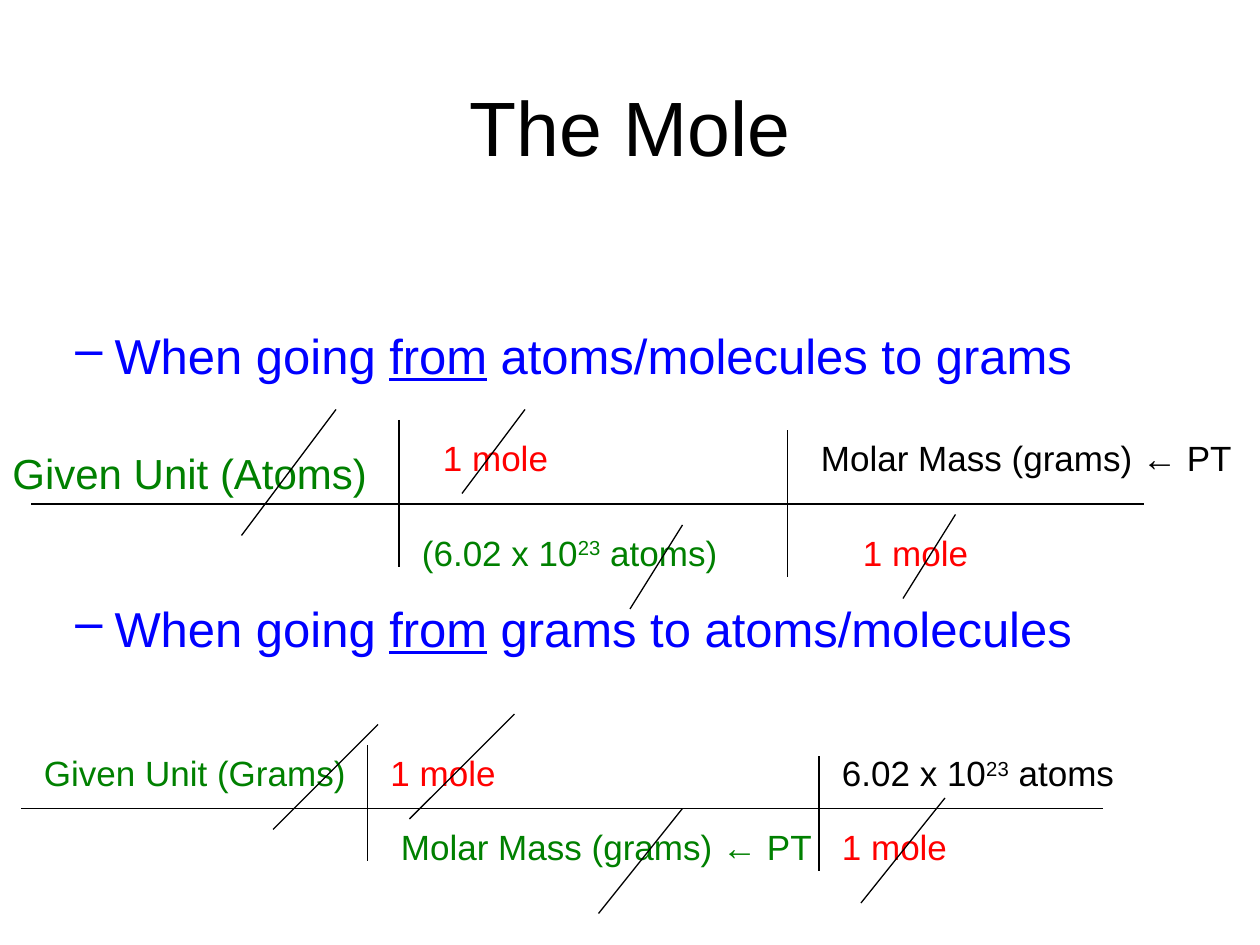
from lxml import etree
from pptx import Presentation
from pptx.dml.color import RGBColor
from pptx.enum.shapes import MSO_CONNECTOR as Connector
from pptx.enum.text import MSO_ANCHOR as Anchor, PP_ALIGN as Align
from pptx.oxml.ns import qn
from pptx.util import Cm, Pt

BLACK = RGBColor(0x00, 0x00, 0x00)
BLUE = RGBColor(0x00, 0x00, 0xFF)
GREEN = RGBColor(0x00, 0x80, 0x00)
RED = RGBColor(0xFF, 0x00, 0x00)


def grid(units):
    """Length of a number of grid units, 120 of which span the slide width."""
    return Cm(units * 25.4 / 120)


class MoleSlide:
    font_name = "Arial"
    line_width = Pt(0.75)

    def __init__(self, presentation):
        self.slide = presentation.slides.add_slide(presentation.slide_layouts[6])

    def text(self, left, top, width, height, parts, size=20, color=BLACK):
        """Add a one-paragraph box; parts are pairs of wording and 'u', 'sup' or ''."""
        box = self.slide.shapes.add_textbox(*map(grid, (left, top, width, height)))
        box.text_frame.word_wrap = True
        paragraph = box.text_frame.paragraphs[0]
        for wording, effect in parts:
            run = paragraph.add_run()
            run.text = wording
            values = {"name": self.font_name, "size": Pt(size), "underline": effect == "u"}
            for name, value in values.items():
                setattr(run.font, name, value)
            run.font.color.rgb = color
            if effect == "sup":
                run._r.get_or_add_rPr().set("baseline", "30000")
        return box

    def title(self, wording):
        frame = self.text(9, 3, 102, 18, [(wording, "")], 44).text_frame
        frame.vertical_anchor = Anchor.MIDDLE
        frame.paragraphs[0].alignment = Align.CENTER

    def heading(self, top, ending):
        parts = [("When going ", ""), ("from", "u"), (ending, "")]
        box = self.text(0, top, 120, 6.6, parts, 28, BLUE)
        properties = box.text_frame.paragraphs[0]._p.get_or_add_pPr()
        properties.set("marL", str(Cm(2.06)))
        properties.set("indent", str(-Cm(0.79)))
        etree.SubElement(properties, qn("a:buChar")).set("char", "–")

    def line(self, *ends):
        line = self.slide.shapes.add_connector(Connector.STRAIGHT, *map(grid, ends))
        line.line.width = self.line_width
        line.line.color.rgb = BLACK
        etree.SubElement(line._element.spPr, qn("a:effectLst"))


LABELS = [  # left, top, width, parts, size, colour
    (0, 42, 38, [("Given Unit (Atoms)", "")], 24, GREEN),
    (41, 41, 57, [("1 mole", "")], 20, RED),
    (77, 41, 46, [("Molar Mass (grams) ← PT", "")], 20, BLACK),
    (39, 50, 57, [("(6.02 x 10", ""), ("23", "sup"), (" atoms)", "")], 20, GREEN),
    (81, 50, 21, [("1 mole", "")], 20, RED),
    (3, 71, 35, [("Given Unit (Grams)", "")], 20, GREEN),
    (36, 71, 57, [("1 mole", "")], 20, RED),
    (79, 71, 46, [("6.02 x 10", ""), ("23", "sup"), (" atoms", "")], 20, BLACK),
    (37, 78, 57, [("Molar Mass (grams) ← PT", "")], 20, GREEN),
    (79, 78, 36, [("1 mole", "")], 20, RED),
]

FRACTION_BARS = [(3, 48, 109, 48), (2, 77, 105, 77)]
DIVIDERS = [(38, 40, 38, 54), (75, 41, 75, 55), (35, 71, 35, 82), (78, 72, 78, 83)]
UNIT_STRIKES = [
    (32, 39, 23, 51), (50, 39, 44, 47), (65, 50, 60, 58), (91, 49, 86, 57),
    (36, 69, 26, 79), (49, 68, 39, 78), (65, 77, 57, 87), (90, 76, 82, 86),
]


def main():
    presentation = Presentation()
    presentation.slide_width, presentation.slide_height = Cm(25.4), Cm(19.05)
    slide = MoleSlide(presentation)
    slide.title("The Mole")
    slide.heading(30.4, " atoms/molecules to grams")
    slide.heading(56.4, " grams to atoms/molecules")
    for left, top, width, parts, size, color in LABELS:
        slide.text(left, top, width, 5.3, parts, size, color)
    for ends in FRACTION_BARS + DIVIDERS + UNIT_STRIKES:
        slide.line(*ends)
    presentation.save("out.pptx")


if __name__ == "__main__":
    main()
